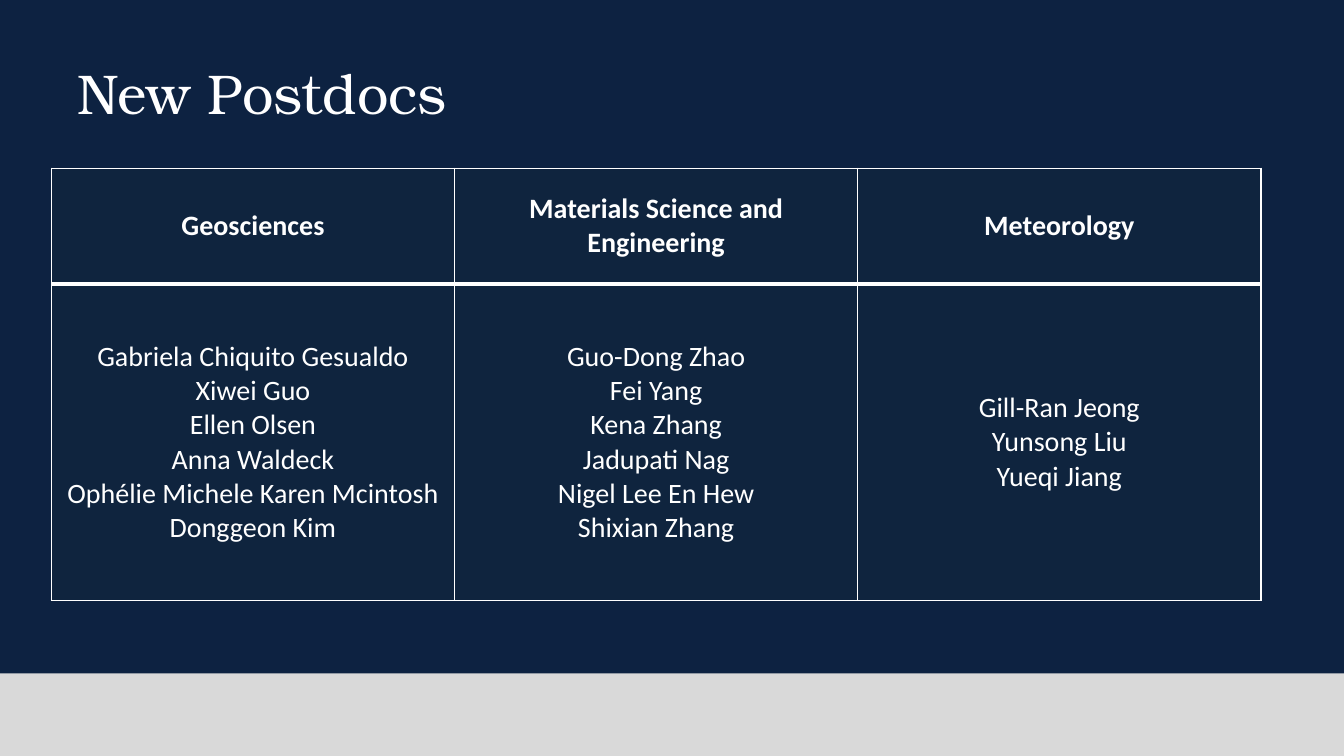
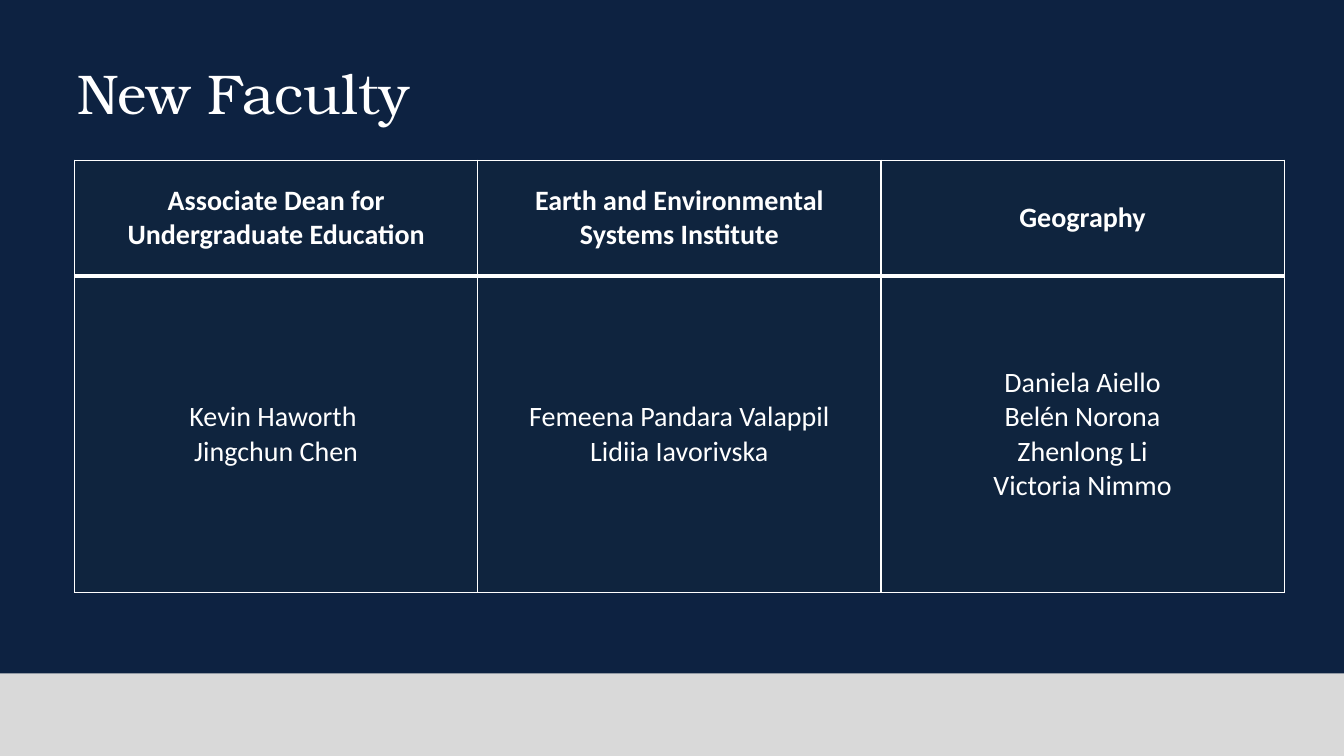
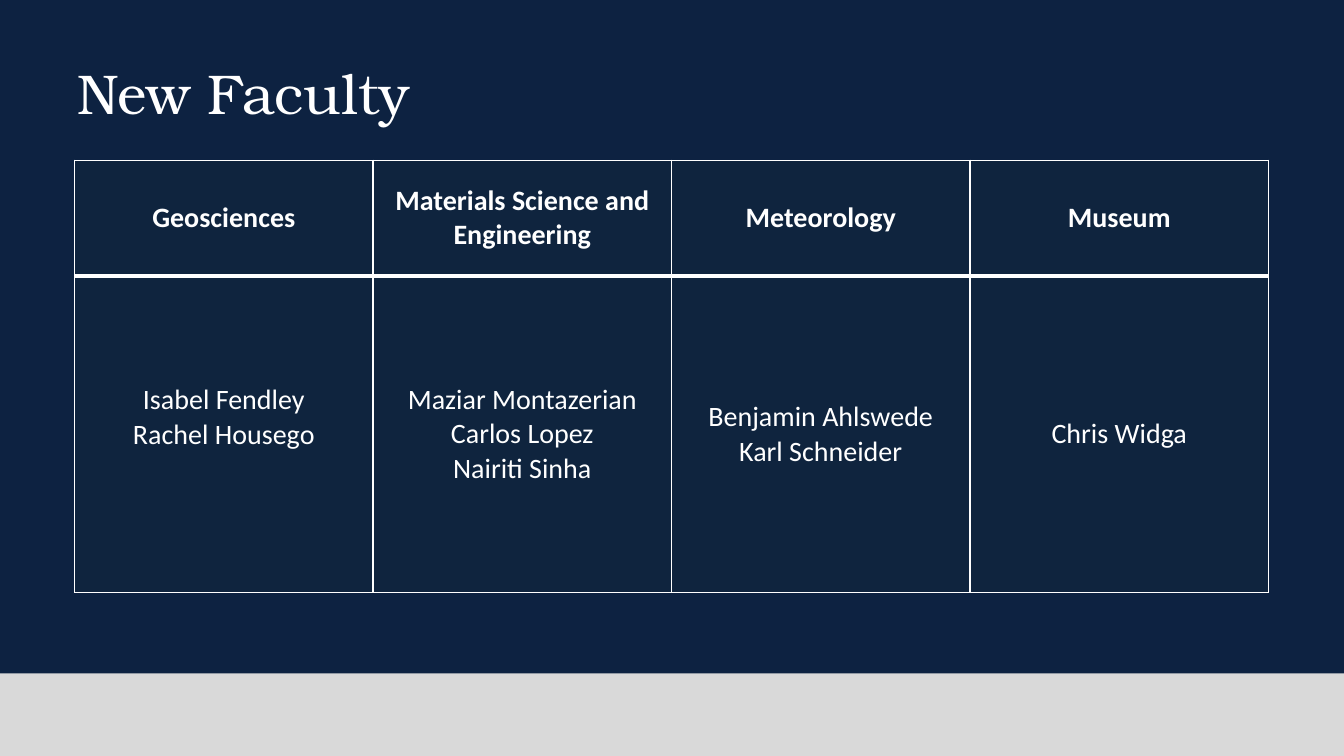
from lxml.etree import SubElement
from pptx import Presentation
from pptx.dml.color import RGBColor
from pptx.enum.shapes import MSO_SHAPE
from pptx.enum.text import MSO_ANCHOR, PP_ALIGN
from pptx.oxml import parse_xml
from pptx.oxml.ns import nsdecls, qn
from pptx.util import Pt

COLORS = {"navy": "0D2241", "grey": "D9D9D9", "cell": "0F243E", "white": "FFFFFF"}
TITLE_FONT = "TeX Gyre Bonum"
TABLE_FONT = "Calibri"
ROW_HEIGHTS = (82.8, 226)
LINE_HEIGHT = 24.4

pages = [
    {
        "title": "New Postdocs", "left": 36.7, "top": 120.2, "column_width": 288,
        "columns": [
            ("Geosciences", ["Gabriela Chiquito Gesualdo", "Xiwei Guo", "Ellen Olsen",
                             "Anna Waldeck", "Ophélie Michele Karen Mcintosh",
                             "Donggeon Kim"], 0),
            ("Materials Science and Engineering",
             ["Guo-Dong Zhao", "Fei Yang", "Kena Zhang", "Jadupati Nag",
              "Nigel Lee En Hew", "Shixian Zhang"], 0),
            ("Meteorology", ["Gill-Ran Jeong", "Yunsong Liu", "Yueqi Jiang"], 0),
        ],
    },
    {
        "title": "New Faculty", "left": 53.3, "top": 114.5, "column_width": 288,
        "columns": [
            ("Associate Dean for Undergraduate Education",
             ["Kevin Haworth ", "Jingchun Chen"], 0),
            ("Earth and Environmental Systems Institute",
             ["Femeena Pandara Valappil", "Lidiia Iavorivska"], 0),
            ("Geography", ["Daniela Aiello", "Belén Norona", "Zhenlong Li",
                           "Victoria Nimmo"], 0),
        ],
    },
    {
        "title": "New Faculty", "left": 53.3, "top": 114.5, "column_width": 213.2,
        "columns": [
            ("Geosciences", ["Isabel Fendley", "Rachel Housego"], LINE_HEIGHT),
            ("Materials Science and Engineering",
             ["Maziar Montazerian", "Carlos Lopez", "Nairiti Sinha"], 0),
            ("Meteorology", ["Benjamin Ahlswede", "Karl Schneider"], 0),
            ("Museum", ["Chris Widga"], 0),
        ],
    },
]


def format_font(font, name, size, bold):
    font.name = name
    font.size = Pt(size)
    font.bold = bold
    font.color.rgb = RGBColor.from_string(COLORS["white"])


def set_borders(cell, widths):
    properties = cell._tc.get_or_add_tcPr()
    for index, (side, width) in enumerate(widths.items()):
        line = parse_xml(f'<a:{side} {nsdecls("a")} w="{Pt(width)}"/>')
        fill = SubElement(line, qn("a:solidFill"))
        SubElement(fill, qn("a:srgbClr"), val=COLORS["white"])
        properties.insert(index, line)


presentation = Presentation()
presentation.slide_width = Pt(960)
presentation.slide_height = Pt(540)
layout = presentation.slide_layouts[5]
slides = [presentation.slides.add_slide(layout) for page in pages]

bands = [("navy", 0, 482.4), ("grey", 481, 59)]
for index, (color, top, height) in enumerate(bands):
    band = slides[0].shapes.add_shape(MSO_SHAPE.RECTANGLE, 0, Pt(top), Pt(960), Pt(height))
    band.shadow.inherit = False
    band.fill.solid()
    band.fill.fore_color.rgb = RGBColor.from_string(COLORS[color])
    band.line.fill.background()
    layout.shapes.element.insert(2 + index, band.element)

for slide, page in zip(slides, pages):
    title = slide.shapes.title
    title.left, title.top, title.width, title.height = Pt(48), Pt(26), Pt(864), Pt(80)
    title.text_frame.text = page["title"]
    title.text_frame.vertical_anchor = MSO_ANCHOR.MIDDLE
    paragraph = title.text_frame.paragraphs[0]
    paragraph.alignment = PP_ALIGN.LEFT
    format_font(paragraph.runs[0].font, TITLE_FONT, 40, False)

    columns = page["columns"]
    table = slide.shapes.add_table(
        2, len(columns), Pt(page["left"]), Pt(page["top"]),
        Pt(page["column_width"] * len(columns)), Pt(sum(ROW_HEIGHTS))).table
    table.horz_banding = False
    for row, height in zip(table.rows, ROW_HEIGHTS):
        row.height = Pt(height)
    for column_index, (heading, names, lift) in enumerate(columns):
        table.columns[column_index].width = Pt(page["column_width"])
        for row_index, lines in enumerate(([heading], names)):
            is_header = row_index == 0
            cell = table.cell(row_index, column_index)
            cell.vertical_anchor = MSO_ANCHOR.MIDDLE
            cell.margin_left = cell.margin_right = Pt(7.9)
            cell.margin_top = Pt(4)
            cell.margin_bottom = Pt(4 if is_header else 4 + lift)
            cell.fill.solid()
            cell.fill.fore_color.rgb = RGBColor.from_string(COLORS["cell"])
            set_borders(cell, {"lnL": 1, "lnR": 1, "lnT": 1 if is_header else 3,
                               "lnB": 3 if is_header else 1})
            cell.text_frame.text = "\n".join(lines)
            for paragraph in cell.text_frame.paragraphs:
                paragraph.alignment = PP_ALIGN.CENTER
                format_font(paragraph.runs[0].font, TABLE_FONT, 20, is_header)

presentation.save("out.pptx")
